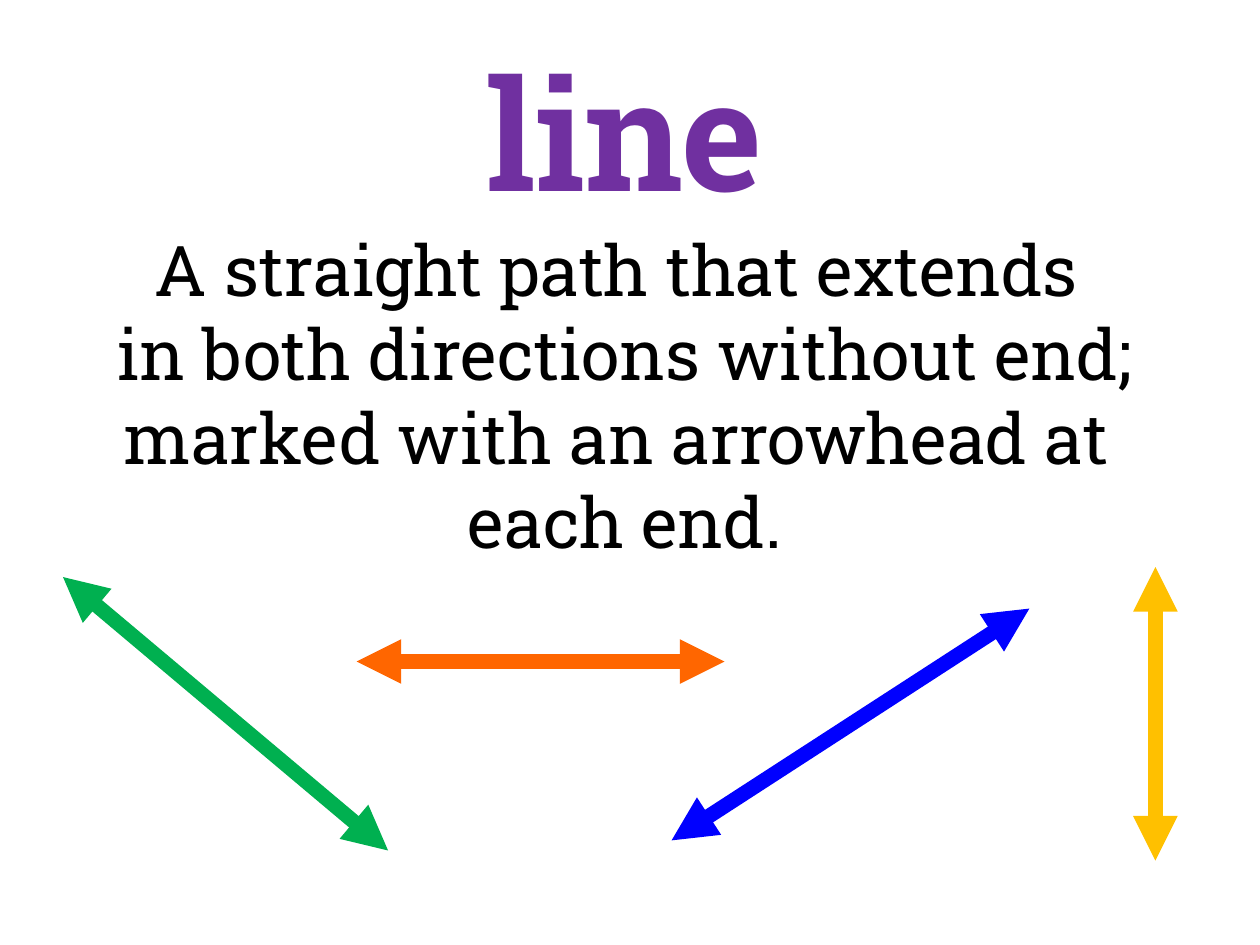
from typing import NamedTuple

from lxml import etree
from pptx import Presentation
from pptx.dml.color import RGBColor
from pptx.enum import shapes, text
from pptx.oxml.ns import qn
from pptx.util import Inches, Pt

FONT = "Roboto Slab"
COLORS = {
    "term": "7030A0",
    "definition": "000000",
    "green": "00B050",
    "orange": "FF6600",
    "gold": "FFC000",
    "blue": "0000FF",
}


class ExampleLine(NamedTuple):
    start: tuple[float, float]
    end: tuple[float, float]
    color: str


EXAMPLES = [
    ExampleLine((0.5, 4.58), (3.08, 6.75), "green"),
    ExampleLine((2.83, 5.25), (5.75, 5.25), "orange"),
    ExampleLine((9.17, 6.83), (9.17, 4.5), "gold"),
    ExampleLine((5.33, 6.67), (8.17, 4.83), "blue"),
]


def write(shape, paragraphs: list[str], *, size: float, color: str, bold: bool = False) -> None:
    """Fill a shape with centred paragraphs in one format."""
    frame = shape.text_frame
    frame.word_wrap = True
    frame.auto_size = text.MSO_AUTO_SIZE.NONE
    frame.vertical_anchor = text.MSO_ANCHOR.TOP
    for index, words in enumerate(paragraphs):
        paragraph = frame.add_paragraph() if index else frame.paragraphs[0]
        paragraph.alignment = text.PP_ALIGN.CENTER
        run = paragraph.add_run()
        run.text = words
        run.font.name = FONT
        run.font.size = Pt(size)
        run.font.bold = bold
        run.font.color.rgb = RGBColor.from_string(COLORS[color])


def draw_example(slide, example: ExampleLine) -> None:
    """Draw a thick line with an arrowhead at each end."""
    points = [Inches(value) for value in (*example.start, *example.end)]
    connector = slide.shapes.add_connector(shapes.MSO_CONNECTOR.STRAIGHT, *points)
    connector.line.width = Pt(8.5)
    connector.line.color.rgb = RGBColor.from_string(COLORS[example.color])
    outline = connector.line._get_or_add_ln()
    for end in ("a:headEnd", "a:tailEnd"):
        etree.SubElement(outline, qn(end), type="triangle")
    etree.SubElement(connector._element.spPr, qn("a:effectLst"))


def main() -> None:
    deck = Presentation()
    deck.slide_width, deck.slide_height = Inches(10), Inches(7.5)
    slide = deck.slides.add_slide(deck.slide_layouts[5])
    left, width = Inches(0.17), Inches(9.58)

    # Term
    term = slide.shapes.title
    term.left, term.top, term.width, term.height = left, Inches(0.25), width, Inches(2.26)
    write(term, ["line"], size=88, color="term", bold=True)

    # Definition
    definition = slide.shapes.add_textbox(left, Inches(1.75), width, Inches(2.79))
    write(
        definition,
        [
            "A straight path that extends ",
            "in both directions without end; marked with an arrowhead at ",
            "each end.",
        ],
        size=40,
        color="definition",
    )

    # Example lines
    for example in EXAMPLES:
        draw_example(slide, example)

    deck.save("out.pptx")


if __name__ == "__main__":
    main()
